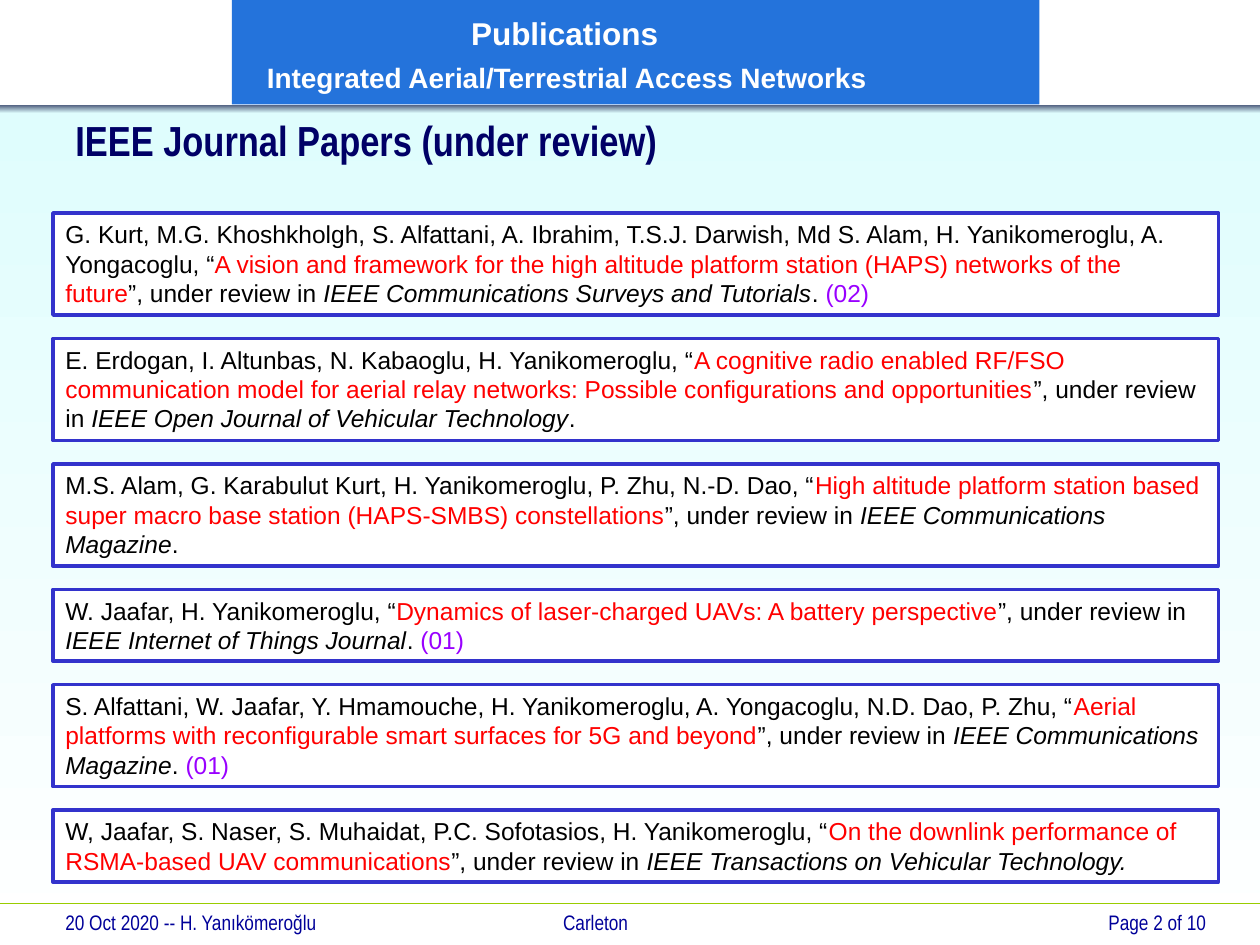
"""Builds the publications slide listing journal papers under review."""
from lxml import etree
from pptx import Presentation
from pptx.dml.color import RGBColor
from pptx.enum.shapes import MSO_CONNECTOR, MSO_SHAPE
from pptx.enum.text import MSO_ANCHOR, PP_ALIGN
from pptx.oxml.ns import qn
from pptx.util import Inches, Pt

RECT = MSO_SHAPE.RECTANGLE
STRAIGHT = MSO_CONNECTOR.STRAIGHT
TOP, MIDDLE = MSO_ANCHOR.TOP, MSO_ANCHOR.MIDDLE
LEFT, RIGHT = PP_ALIGN.LEFT, PP_ALIGN.RIGHT

WIDTH, HEIGHT = 10, 7.5
WHITE, BLACK, RED, PURPLE = "FFFFFF", "000000", "FF0000", "9900FF"
NAVY, FOOTER_BLUE, BORDER, BANNER = "000066", "000099", "3333CC", "2473DB"
PALE, SLATE, LIME = "DFFDFD", "475577", "99CC00"

BANNER_LINES = [("Publications", 18, 1.8), ("Integrated Aerial/Terrestrial Access Networks", 16, 0.18)]
HEADING = "IEEE Journal Papers (under review)"
FOOTER = "20 Oct 2020 -- H. Yanıkömeroğlu\tCarleton"
PAGE = "Page 2 of 10"

# authors, title, journal, full stop, count, lines
PAPERS = [
    ("G. Kurt, M.G. Khoshkholgh, S. Alfattani, A. Ibrahim, T.S.J. Darwish, Md S. Alam, "
     "H. Yanikomeroglu, A. Yongacoglu",
     "A vision and framework for the high altitude platform station (HAPS) networks of the future",
     "IEEE Communications Surveys and Tutorials", ".", " (02)", 3),
    ("E. Erdogan, I. Altunbas, N. Kabaoglu, H. Yanikomeroglu",
     "A cognitive radio enabled RF/FSO communication model for aerial relay networks: "
     "Possible configurations and opportunities",
     "IEEE Open Journal of Vehicular Technology", ".", "", 3),
    ("M.S. Alam, G. Karabulut Kurt, H. Yanikomeroglu, P. Zhu, N.-D. Dao",
     "High altitude platform station based super macro base station (HAPS-SMBS) constellations",
     "IEEE Communications Magazine", ".", "", 3),
    ("W. Jaafar, H. Yanikomeroglu",
     "Dynamics of laser-charged UAVs: A battery perspective",
     "IEEE Internet of Things Journal", ".", " (01)", 2),
    ("S. Alfattani, W. Jaafar, Y. Hmamouche, H. Yanikomeroglu, A. Yongacoglu, N.D. Dao, P. Zhu",
     "Aerial platforms with reconfigurable smart surfaces for 5G and beyond",
     "IEEE Communications Magazine", ".", " (01)", 3),
    ("W, Jaafar, S. Naser, S. Muhaidat, P.C. Sofotasios, H. Yanikomeroglu",
     "On the downlink performance of RSMA-based UAV communications",
     "IEEE Transactions on Vehicular Technology.", "", "", 2),
]
MARGIN, LIST_TOP, LIST_BOTTOM = 0.42, 1.69, 7.0
BOX_HEIGHT = {2: 0.57, 3: 0.81}


def rgb(value):
    return RGBColor.from_string(value)


def add_box(slide, left, top, width, height, fill, border=None):
    box = slide.shapes.add_shape(RECT, Inches(left), Inches(top), Inches(width), Inches(height))
    box.shadow.inherit = False
    if isinstance(fill, tuple):
        box.fill.gradient()
        box.fill.gradient_angle = 270
        for stop, color in zip(box.fill.gradient_stops, fill):
            stop.color.rgb = rgb(color)
    else:
        box.fill.solid()
        box.fill.fore_color.rgb = rgb(fill)
    if border:
        box.line.color.rgb = rgb(border)
        box.line.width = Pt(2)
    else:
        box.line.fill.background()
    return box


def add_label(slide, left, top, width, height):
    return slide.shapes.add_textbox(Inches(left), Inches(top), Inches(width), Inches(height))


def start_paragraph(holder, first=True, anchor=TOP, align=LEFT):
    frame = holder.text_frame
    frame.word_wrap = True
    frame.vertical_anchor = anchor
    paragraph = frame.paragraphs[0] if first else frame.add_paragraph()
    paragraph.alignment = align
    return paragraph


def write(paragraph, text, size=14, font="Arial", color=BLACK, bold=False, italic=False):
    run = paragraph.add_run()
    run.text = text
    run.font.size, run.font.name = Pt(size), font
    run.font.bold, run.font.italic = bold, italic
    run.font.color.rgb = rgb(color)


def add_backdrop(slide):
    add_box(slide, 0, 0.86, WIDTH, HEIGHT - 0.86, (PALE, WHITE))
    rule = slide.shapes.add_connector(STRAIGHT, 0, Inches(7.17), Inches(WIDTH), Inches(7.17))
    rule.line.color.rgb = rgb(LIME)
    rule.line.width = Pt(0.75)
    etree.SubElement(rule._element.spPr, qn("a:effectLst"))
    add_box(slide, 0, 0.83, WIDTH, 0.07, (SLATE, PALE))


def add_footer(slide):
    style = dict(size=12, font="Arial Narrow", color=FOOTER_BLUE)
    credit = start_paragraph(add_label(slide, MARGIN, 7.17, 6.25, 0.33))
    tabs = etree.SubElement(credit._p.get_or_add_pPr(), qn("a:tabLst"))
    etree.SubElement(tabs, qn("a:tab"), pos=str(Inches(3.95)), algn="l")
    write(credit, FOOTER, **style)
    write(start_paragraph(add_label(slide, 7.5, 7.17, 2.17, 0.25), align=RIGHT), PAGE, **style)


def add_headings(slide):
    banner = add_box(slide, 1.84, 0, 6.41, 0.83, BANNER)
    for index, (text, size, indent) in enumerate(BANNER_LINES):
        line = start_paragraph(banner, first=index == 0, anchor=MIDDLE)
        line._p.get_or_add_pPr().set("marL", str(Inches(indent)))
        line.line_spacing = 1.1
        if index:
            line.space_before = Pt(0.2 * size)
        write(line, text, size=size, color=WHITE, bold=True)
    heading = start_paragraph(add_label(slide, 0.5, 0.9, 8.5, 0.42), anchor=MIDDLE)
    write(heading, HEADING, size=24, font="Arial Narrow", color=NAVY, bold=True)


def add_papers(slide):
    heights = [BOX_HEIGHT[paper[-1]] for paper in PAPERS]
    gap = (LIST_BOTTOM - LIST_TOP - sum(heights)) / (len(PAPERS) - 1)
    top = LIST_TOP
    for (authors, title, journal, stop, count, _), height in zip(PAPERS, heights):
        box = add_box(slide, MARGIN, top, 9.25, height, WHITE, BORDER)
        entry = start_paragraph(box)
        write(entry, f"{authors}, “")
        write(entry, title, color=RED)
        write(entry, "”, under review in ")
        write(entry, journal, italic=True)
        if stop:
            write(entry, stop)
        if count:
            write(entry, count, color=PURPLE)
        top += height + gap


def main():
    deck = Presentation()
    deck.slide_width, deck.slide_height = Inches(WIDTH), Inches(HEIGHT)
    slide = deck.slides.add_slide(deck.slide_layouts[6])
    add_backdrop(slide)
    add_footer(slide)
    add_headings(slide)
    add_papers(slide)
    deck.save("out.pptx")


if __name__ == "__main__":
    main()
